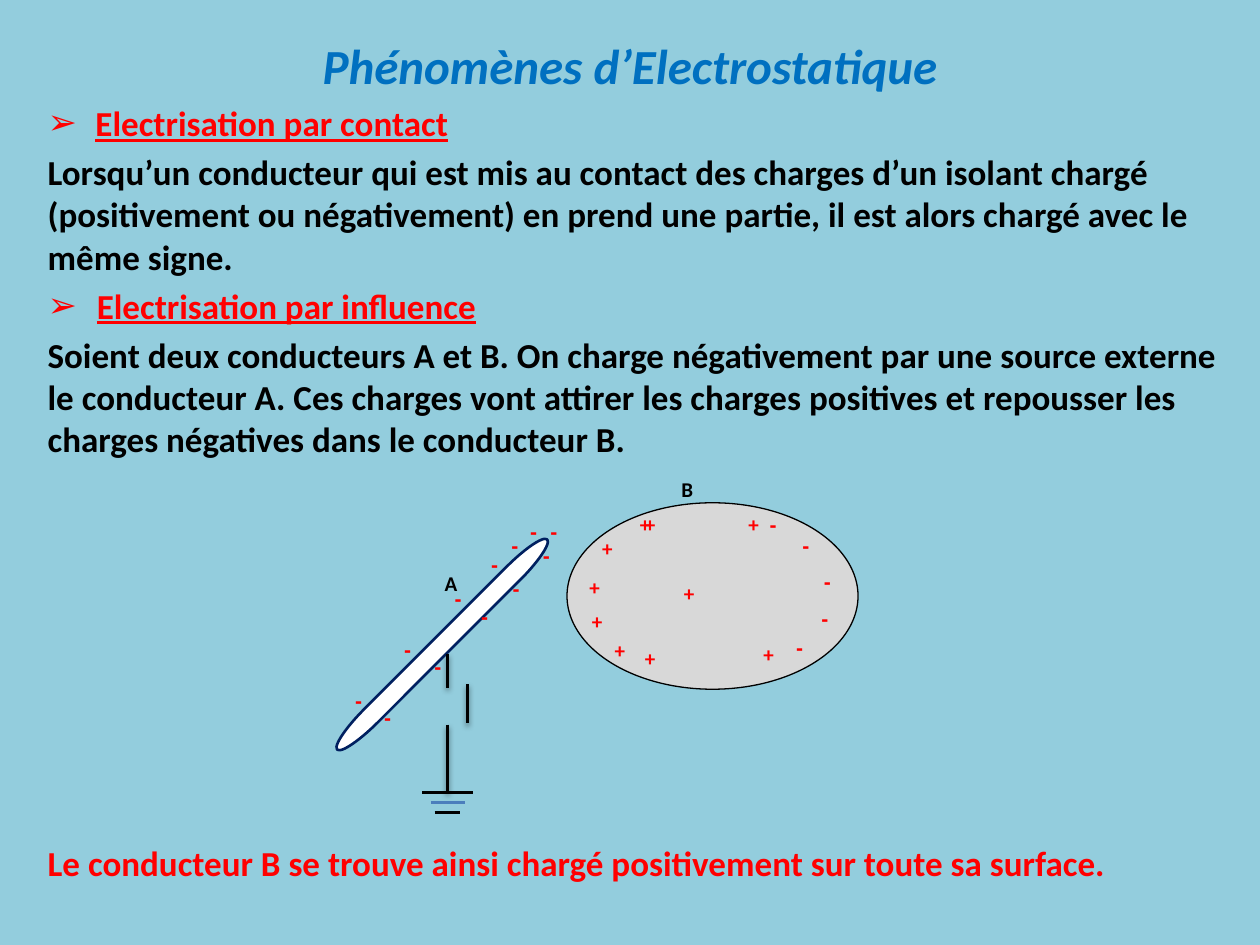
from lxml.etree import SubElement as Sub
from pptx import Presentation
from pptx.dml.color import RGBColor as RGB
from pptx.enum.shapes import MSO_CONNECTOR as CON, MSO_SHAPE as SHAPE
from pptx.enum.text import MSO_ANCHOR as ANCHOR, PP_ALIGN as ALIGN
from pptx.oxml.ns import qn
from pptx.util import Inches, Pt


def tint(part, code):
    part.rgb = RGB.from_string(code)


def write(box, text, code, **form):
    left, top, wide, high = map(Inches, box)
    frame = slide.shapes.add_textbox(left, top, wide, high).text_frame
    frame.word_wrap = True
    para = frame.paragraphs[0]
    run = para.add_run()
    run.text = text
    for name, value in ({"name": "Calibri", "bold": True} | form).items():
        setattr(run.font, name, value)
    tint(run.font.color, code)
    return frame


RED, BLACK = "FF0000", "000000"
deck = Presentation()
deck.slide_width, deck.slide_height = Inches(10), Inches(7.5)
slide = deck.slides.add_slide(deck.slide_layouts[6])
slide.background.fill.solid()
tint(slide.background.fill.fore_color, "93CDDD")

title = write((0.5, 0.13, 9, 0.77), "Phénomènes d’Electrostatique", "0070C0",
              size=Pt(28), italic=True)
title.vertical_anchor = ANCHOR.MIDDLE
title.paragraphs[0].alignment = ALIGN.CENTER

bodies = [
    (SHAPE.OVAL, (4.5, 3.99, 2.31, 1.48), 0, "D8D8D8", BLACK, 0.75),
    (SHAPE.FLOWCHART_TERMINATOR, (2.33, 5.04, 2.36, 0.15), 315, "FFFFFF", "002060", 1.5),
]
for kind, box, turn, fill, edge, width in bodies:
    body = slide.shapes.add_shape(kind, *map(Inches, box))
    body.shadow.inherit = False
    body.rotation = turn
    body.fill.solid()
    tint(body.fill.fore_color, fill)
    tint(body.line.color, edge)
    body.line.width = Pt(width)

wires = [
    (3.71, 5.43, 3.71, 5.74, BLACK, 2),
    (3.55, 5.19, 3.55, 5.46, BLACK, 2),
    (3.55, 5.75, 3.55, 6.29, BLACK, 2),
    (3.35, 6.29, 3.75, 6.29, BLACK, 1.5),
    (3.42, 6.37, 3.69, 6.37, "4B7EBC", 1.5),
    (3.45, 6.45, 3.65, 6.45, BLACK, 1.5),
]
for *ends, code, width in wires:
    wire = slide.shapes.add_connector(CON.STRAIGHT, *map(Inches, ends))
    tint(wire.line.color, code)
    wire.line.width = Pt(width)
    effect = Sub(wire._element.spPr, qn("a:effectLst"))
    if width == 2:
        shade = Sub(effect, qn("a:outerShdw"), blurRad=str(Pt(3.1)), dist=str(Pt(1.6)),
                    dir="5400000", rotWithShape="0")
        hue = Sub(shade, qn("a:srgbClr"), val=BLACK)
        Sub(hue, qn("a:alpha"), val="38000")

plus = [
    (4.98, 4.01), (4.68, 4.2), (4.58, 4.51), (4.6, 4.78), (4.78, 5.01),
    (5.02, 4.01, 0.47, 0.39), (5.84, 4.01, 0.28, 0.28), (5.02, 5.07, 0.3, 0.28),
    (5.33, 4.56, 0.33, 0.32), (5.96, 5.04, 0.27, 0.33),
]
minus = [
    (6.01, 4.01), (6.27, 4.18), (6.44, 4.46), (6.42, 4.76), (6.22, 4.99),
    (3.8, 4.33), (3.97, 4.52), (3.35, 5.14), (3.72, 4.74), (3.51, 4.6), (3.96, 4.18),
    (4.27, 4.07), (3.11, 5), (2.72, 5.41), (2.95, 5.54), (4.21, 4.26), (4.11, 4.07),
]
marks = [
    ("+", "Calibri", RED, plus),
    ("-", "Arial", RED, minus),
    ("B", "Calibri", BLACK, [(5.31, 3.73)]),
    ("A", "Calibri", BLACK, [(3.43, 4.48)]),
]
for sign, face, code, spots in marks:
    for left, top, *size in spots:
        mark = write((left, top, *(size or (0.37, 0.46))), sign, code, name=face, size=Pt(12))
        mark.paragraphs[0].space_after = Pt(10)

lines = [
    ("Electrisation par contact", 0.38),
    ("Lorsqu’un conducteur qui est mis au contact des charges d’un isolant chargé "
     "(positivement ou négativement) en prend une partie, il est alors chargé avec le "
     "même signe.", 0),
    ("Electrisation par influence", 0.39),
    ("Soient deux conducteurs A et B. On charge négativement par une source externe le "
     "conducteur A. Ces charges vont attirer les charges positives et repousser les charges "
     "négatives dans le conducteur B.", 0),
]
frame = slide.shapes.add_textbox(*map(Inches, (0.28, 0.76, 9.53, 2.99))).text_frame
frame.word_wrap = True
for index, (text, indent) in enumerate(lines):
    para = frame.add_paragraph() if index else frame.paragraphs[0]
    if index:
        para.space_before = Pt(4)
    if indent:
        props = para._p.get_or_add_pPr()
        props.set("marL", str(Inches(indent)))
        props.set("indent", str(-Inches(indent)))
        Sub(props, qn("a:buFont"), typeface="Arial")
        Sub(props, qn("a:buChar"), char="➢")
    run = para.add_run()
    run.text = text
    form = {"name": "Calibri", "size": Pt(20), "bold": True, "underline": bool(indent)}
    for name, value in form.items():
        setattr(run.font, name, value)
    tint(run.font.color, RED if indent else BLACK)

write((0.28, 6.63, 9.21, 0.74),
      "Le conducteur B se trouve ainsi chargé positivement sur toute sa surface.", RED,
      size=Pt(20))

deck.save("out.pptx")
